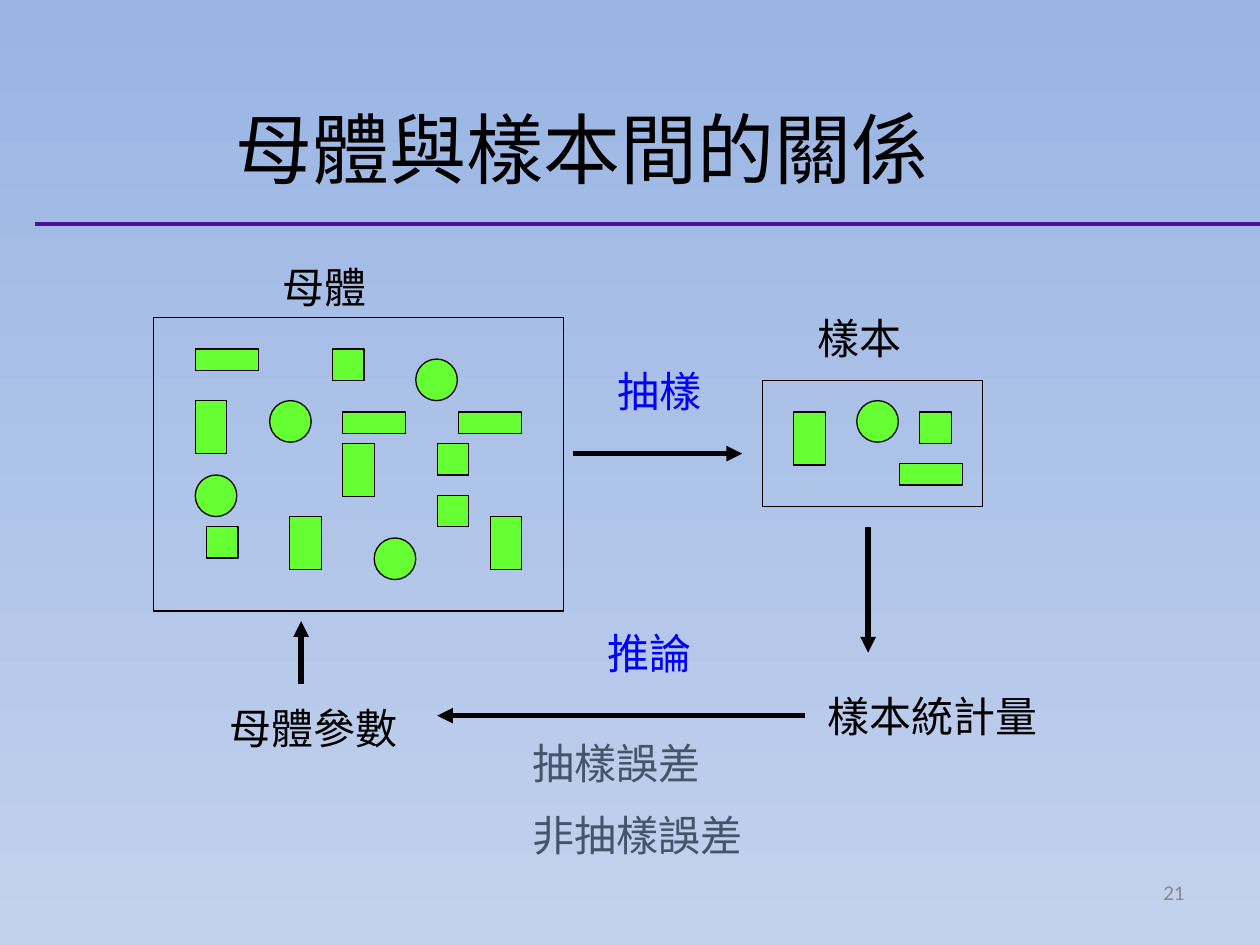
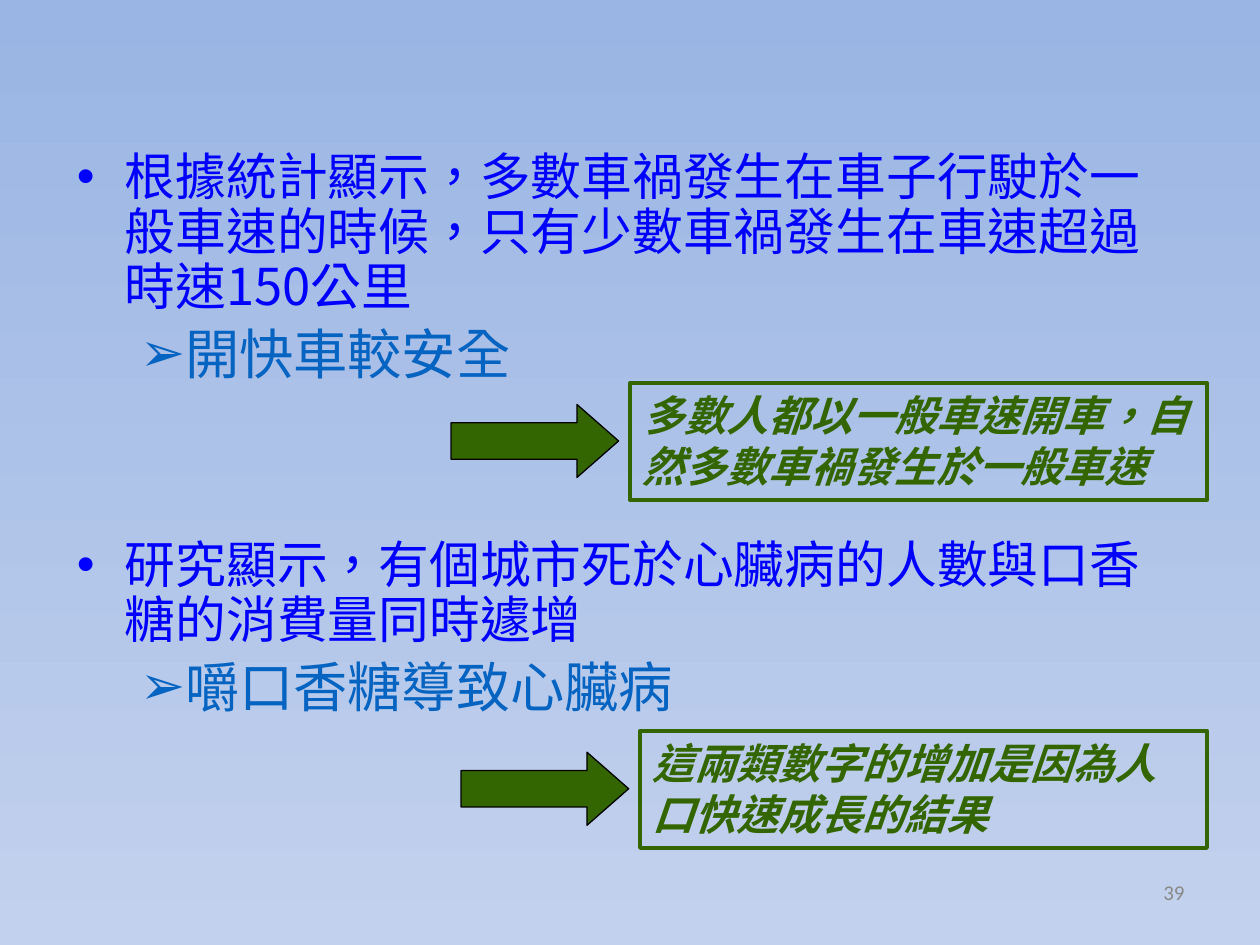
from lxml.etree import SubElement
from pptx import Presentation
from pptx.dml.color import RGBColor
from pptx.enum.shapes import MSO_CONNECTOR, MSO_SHAPE
from pptx.enum.text import MSO_ANCHOR, MSO_AUTO_SIZE, PP_ALIGN
from pptx.oxml.ns import qn
from pptx.util import Inches, Pt

# Shared style
BLACK = RGBColor(0x00, 0x00, 0x00)
BLUE = RGBColor(0x00, 0x00, 0xFF)
CLAIM_BLUE = RGBColor(0x05, 0x63, 0xC1)
SLATE = RGBColor(0x44, 0x54, 0x6A)
GRAY = RGBColor(0x89, 0x89, 0x89)
LIME = RGBColor(0x66, 0xFF, 0x33)
GREEN = RGBColor(0x33, 0x66, 0x00)
PURPLE = RGBColor(0x51, 0x0C, 0x9C)
SKY_TOP = RGBColor(0x9A, 0xB5, 0xE4)
SKY_BOTTOM = RGBColor(0xC2, 0xD1, 0xED)
CJK_FONT, LABEL_FONT, PLAIN_FONT = "Noto Sans CJK SC", "Lato", "Calibri"

# Slide 1 content: frames, members by kind, labels and arrows
RELATION_TITLE = "母體與樣本間的關係"
FRAMES = [(1.22, 2.52, 3.25, 2.33), (6.05, 3.02, 1.75, 1)]
MEMBERS = [  # preset, width, height, places in population and sample
    (MSO_SHAPE.RECTANGLE, 0.5, 0.17,
     [(1.55, 2.77), (3.64, 3.27), (2.72, 3.27), (7.14, 3.68)]),
    (MSO_SHAPE.RECTANGLE, 0.25, 0.42,
     [(1.55, 3.18), (2.72, 3.52), (3.89, 4.1), (2.3, 4.1), (6.3, 3.27)]),
    (MSO_SHAPE.RECTANGLE, 0.25, 0.25,
     [(2.64, 2.77), (3.47, 3.52), (1.64, 4.18), (3.47, 3.93), (7.3, 3.27)]),
    (MSO_SHAPE.OVAL, 0.33, 0.33,
     [(2.14, 3.18), (3.3, 2.85), (1.55, 3.77), (2.97, 4.27), (6.8, 3.18)]),
]
LABELS = [
    (["母體"], (2.14, 2.02, 1.25, 0.5), BLACK),
    (["樣本"], (6.39, 2.43, 1, 0.5), BLACK),
    (["抽樣"], (4.8, 2.85, 1, 0.5), BLUE),
    (["樣本統計量"], (6.47, 5.43, 2.25, 0.5), BLACK),
    (["推論"], (4.72, 4.93, 0.92, 0.5), BLUE),
    (["母體參數"], (1.72, 5.52, 1.58, 0.5), BLACK),
    (["抽樣誤差", "非抽樣誤差"], (4.13, 5.8, 2.17, 1.1), SLATE),
]
ARROWS = [
    (4.55, 3.6, 5.89, 3.6),
    (6.89, 4.18, 6.89, 5.18),
    (6.39, 5.68, 3.47, 5.68),
    (2.39, 5.43, 2.39, 4.93),
]

# Slide 2 content: finding, wrong claim, explanation, callout left and top
FALLACIES = [
    ("根據統計顯示，多數車禍發生在車子行駛於一般車速的時候，"
     "只有少數車禍發生在車速超過時速150公里",
     "開快車較安全",
     "多數人都以一般車速開車，自然多數車禍發生於一般車速", 5, 3.04),
    ("研究顯示，有個城市死於心臟病的人數與口香糖的消費量同時遽增",
     "嚼口香糖導致心臟病",
     "這兩類數字的增加是因為人口快速成長的結果", 5.08, 5.8),
]
CALLOUT_RIGHT = 9.58
FINDING_GAP = 88  # points before the second finding, room for the callout


def inches(box):
    return [Inches(value) for value in box]


def add_run(paragraph, text, size, font_name, color, emphasis=False):
    run = paragraph.add_run()
    run.text = text
    font = run.font
    font.size, font.name, font.color.rgb = Pt(size), font_name, color
    if emphasis:
        font.bold = font.italic = True
    run._r.get_or_add_rPr().set("lang", "zh-TW")


def fill_label(frame, lines, color, emphasis=False):
    frame.word_wrap = True
    frame.vertical_anchor = MSO_ANCHOR.TOP
    for index, line in enumerate(lines):
        paragraph = frame.add_paragraph() if index else frame.paragraphs[0]
        paragraph.alignment = PP_ALIGN.LEFT
        paragraph.line_spacing = Pt(29)
        paragraph.space_before = Pt(12 if index else 0)
        add_run(paragraph, line, 24, LABEL_FONT, color, emphasis)


def add_figure(shapes, preset, box, fill=None, line=BLACK, width=0.75):
    shape = shapes.add_shape(preset, *inches(box))
    shape.shadow.inherit = False
    if fill is None:
        shape.fill.background()
    else:
        shape.fill.solid()
        shape.fill.fore_color.rgb = fill
    shape.line.color.rgb = line
    shape.line.width = Pt(width)
    return shape


def add_line(slide, ends, color, width, arrow=False):
    connector = slide.shapes.add_connector(MSO_CONNECTOR.STRAIGHT, *inches(ends))
    connector.line.color.rgb = color
    connector.line.width = Pt(width)
    if arrow:
        SubElement(connector.line._get_or_add_ln(), qn("a:tailEnd"), type="triangle")
    SubElement(connector._element.spPr, qn("a:effectLst"))


def place(shape, box):
    shape.left, shape.top, shape.width, shape.height = inches(box)


def add_page_number(slide, number):
    frame = slide.shapes.add_textbox(*inches((7.17, 6.83, 2.33, 0.5))).text_frame
    frame.word_wrap = True
    frame.vertical_anchor = MSO_ANCHOR.MIDDLE
    frame.paragraphs[0].alignment = PP_ALIGN.RIGHT
    add_run(frame.paragraphs[0], number, 12, PLAIN_FONT, GRAY)


def set_bullet(paragraph, symbol, left, hanging):
    properties = paragraph._p.get_or_add_pPr()
    properties.set("marL", str(Inches(left)))
    properties.set("indent", str(-Inches(hanging)))
    SubElement(properties, qn("a:buFont"), typeface="Arial")
    SubElement(properties, qn("a:buChar"), char=symbol)


def set_background(presentation):
    fill = presentation.slide_master.background.fill
    fill.gradient()
    fill.gradient_angle = 270
    for stop, color in zip(fill.gradient_stops, (SKY_TOP, SKY_BOTTOM)):
        stop.color.rgb = color
    fill.gradient_stops[0].position = 0
    fill.gradient_stops[1].position = 1


def build_relation_slide(presentation):
    slide = presentation.slides.add_slide(presentation.slide_layouts[5])
    add_page_number(slide, "21")

    # Title and rule
    title = slide.shapes.title
    place(title, (0.5, 0.8, 8.25, 0.75))
    title.text_frame.vertical_anchor = MSO_ANCHOR.MIDDLE
    title.text_frame.auto_size = MSO_AUTO_SIZE.NONE
    title.text_frame.paragraphs[0].alignment = PP_ALIGN.CENTER
    add_run(title.text_frame.paragraphs[0], RELATION_TITLE, 44, CJK_FONT, BLACK)
    add_line(slide, (0.28, 1.78, 10, 1.78), PURPLE, 2.25)

    # Population and sample
    for box in FRAMES:
        add_figure(slide.shapes, MSO_SHAPE.RECTANGLE, box)
    for preset, width, height, places in MEMBERS:
        for left, top in places:
            add_figure(slide.shapes, preset, (left, top, width, height), LIME)

    # Labels and arrows
    for lines, box, color in LABELS:
        fill_label(slide.shapes.add_textbox(*inches(box)).text_frame, lines, color)
    for ends in ARROWS:
        add_line(slide, ends, BLACK, 3, arrow=True)


def build_fallacy_slide(presentation):
    slide = presentation.slides.add_slide(presentation.slide_layouts[1])
    title = slide.shapes.title
    title._element.getparent().remove(title._element)
    add_page_number(slide, "39")

    # Findings and claims
    body = slide.placeholders[1]
    place(body, (0.51, 1.15, 9, 4.82))
    frame = body.text_frame
    frame.auto_size = MSO_AUTO_SIZE.NONE
    for index, (finding, claim, *_) in enumerate(FALLACIES):
        paragraph = frame.add_paragraph() if index else frame.paragraphs[0]
        set_bullet(paragraph, "•", 0.38, 0.38)
        paragraph.line_spacing = Pt(31.4)
        paragraph.space_before = Pt(FINDING_GAP if index else 0)
        add_run(paragraph, finding, 29, CJK_FONT, BLUE)

        paragraph = frame.add_paragraph()
        paragraph.level = 1
        set_bullet(paragraph, "➢", 0.81, 0.31)
        paragraph.line_spacing = Pt(32.4)
        paragraph.space_before = Pt(7)
        add_run(paragraph, claim, 31, PLAIN_FONT, CLAIM_BLUE)

    # Explanations, each grouped with its arrow
    for _, _, explanation, left, top in FALLACIES:
        group = slide.shapes.add_group_shape()
        callout = add_figure(group.shapes, MSO_SHAPE.RECTANGLE,
                             (left, top, CALLOUT_RIGHT - left, 0.93),
                             line=GREEN, width=2.25)
        fill_label(callout.text_frame, [explanation], GREEN, emphasis=True)
        arrow = add_figure(group.shapes, MSO_SHAPE.RIGHT_ARROW,
                           (left - 1.42, top + 0.17, 1.33, 0.58), GREEN)
        arrow.adjustments[1] = 0.57


def main():
    presentation = Presentation()
    presentation.slide_width, presentation.slide_height = Inches(10), Inches(7.5)
    set_background(presentation)
    build_relation_slide(presentation)
    build_fallacy_slide(presentation)
    presentation.save("out.pptx")


if __name__ == "__main__":
    main()
